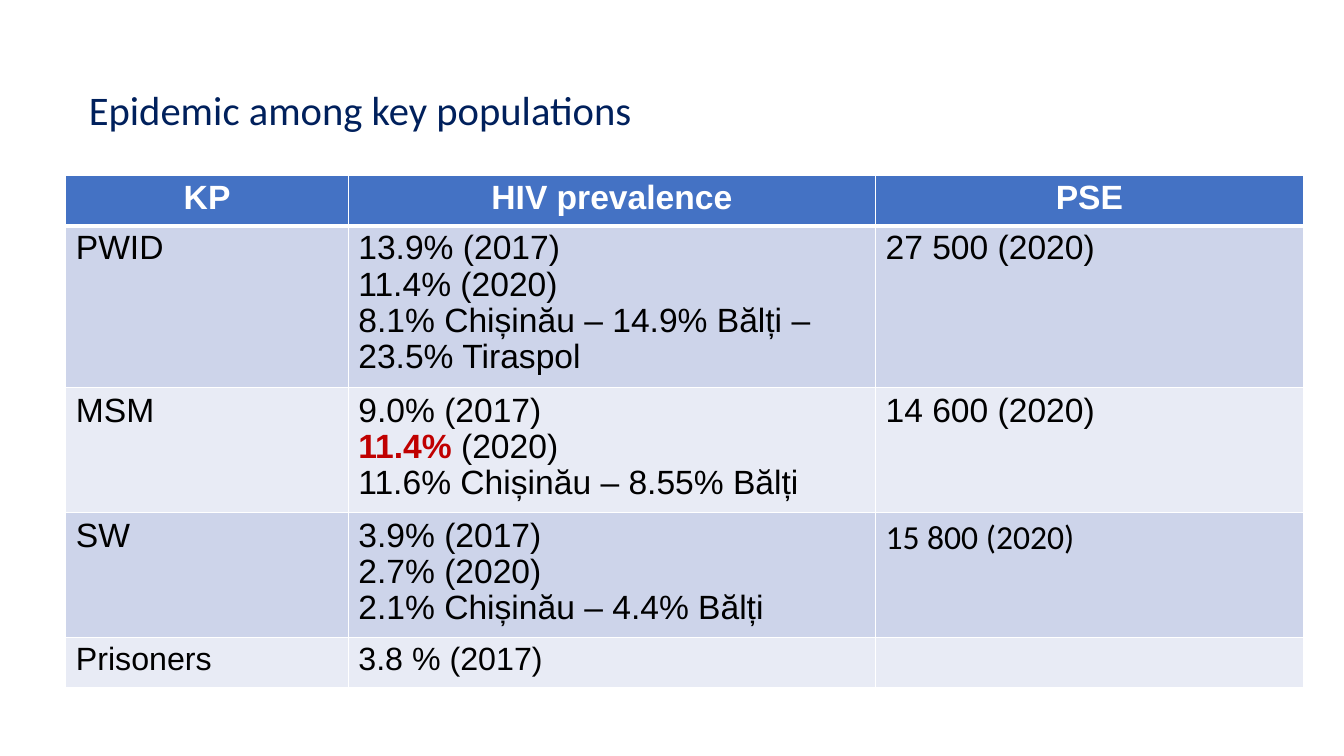
from dataclasses import dataclass

from lxml.etree import SubElement
from pptx import Presentation
from pptx.dml.color import RGBColor
from pptx.enum.text import MSO_ANCHOR, MSO_AUTO_SIZE, PP_ALIGN
from pptx.oxml.ns import qn
from pptx.util import Pt

NAVY = RGBColor(0x00, 0x20, 0x5C)
BLUE = RGBColor(0x44, 0x72, 0xC4)
BAND_DARK = RGBColor(0xCD, 0xD4, 0xEA)
BAND_LIGHT = RGBColor(0xE8, 0xEB, 0xF5)
WHITE = RGBColor(0xFF, 0xFF, 0xFF)
BLACK = RGBColor(0x00, 0x00, 0x00)
RED = RGBColor(0xC0, 0x00, 0x00)

COLUMN_WIDTHS = (201.8, 376.6, 305.5)
ROW_HEIGHTS = (35.8, 115.8, 89.3, 89.3, 35.8)
HEADINGS = ("KP", "HIV prevalence", "PSE")


@dataclass(frozen=True)
class Population:
    name: str
    prevalence: tuple[str, ...]
    size_estimate: str = ""
    highlight: str = ""
    estimate_font: str = "Arial"
    font_size: float = 24


POPULATIONS = (
    Population("PWID", ("13.9% (2017)", "11.4% (2020)",
                        "8.1% Chișinău – 14.9% Bălți – 23.5% Tiraspol"), "27 500 (2020)"),
    Population("MSM", ("9.0% (2017)", "11.4% (2020)", "11.6% Chișinău – 8.55% Bălți"),
               "14 600 (2020)", highlight="11.4% "),
    Population("SW", ("3.9% (2017)", "2.7% (2020)", "2.1% Chișinău – 4.4% Bălți"),
               "15 800 (2020)", estimate_font="Calibri"),
    Population("Prisoners", ("3.8 % (2017)",), font_size=23),
)


def add_text(paragraph, text: str, *, size: float = 24, font: str = "Arial",
             color: RGBColor = BLACK, bold: bool = False) -> None:
    run = paragraph.add_run()
    run.text = text
    run.font.size = Pt(size)
    run.font.name = font
    run.font.color.rgb = color
    run.font.bold = bold


def write_lines(cell, lines: tuple[str, ...], *, highlight: str = "",
                alignment: PP_ALIGN = PP_ALIGN.LEFT, **text_format) -> None:
    """Write one paragraph per line, with a highlighted start where it matches."""
    frame = cell.text_frame
    for index, line in enumerate(lines):
        paragraph = frame.add_paragraph() if index else frame.paragraphs[0]
        paragraph.alignment = alignment
        paragraph.line_spacing = 0.97
        if highlight and line.startswith(highlight):
            add_text(paragraph, highlight, color=RED, bold=True)
            line = line.removeprefix(highlight)
        add_text(paragraph, line, **text_format)


def style_cell(cell, fill: RGBColor, top: float, bottom: float) -> None:
    """Set white borders, whose top and bottom widths are in points, and the fill."""
    properties = cell._tc.get_or_add_tcPr()
    for side, width in (("L", 1), ("R", 1), ("T", top), ("B", bottom)):
        border = SubElement(properties, qn(f"a:ln{side}"), w=str(Pt(width)))
        solid = SubElement(border, qn("a:solidFill"))
        SubElement(solid, qn("a:srgbClr"), val=str(WHITE))
    cell.fill.solid()
    cell.fill.fore_color.rgb = fill


def add_title(slide) -> None:
    title = slide.shapes.title
    title.left, title.top, title.width, title.height = Pt(56.2), Pt(28), Pt(828), Pt(104.4)
    frame = title.text_frame
    frame.auto_size = MSO_AUTO_SIZE.NONE
    frame.vertical_anchor = MSO_ANCHOR.MIDDLE
    paragraph = frame.paragraphs[0]
    paragraph.alignment = PP_ALIGN.LEFT
    paragraph.line_spacing = 0.9
    add_text(paragraph, "Epidemic among key populations", size=29, font="Calibri", color=NAVY)


def add_population_table(slide) -> None:
    table = slide.shapes.add_table(
        len(ROW_HEIGHTS), len(COLUMN_WIDTHS), Pt(47), Pt(125.5),
        Pt(sum(COLUMN_WIDTHS)), Pt(sum(ROW_HEIGHTS))).table
    for column, width in zip(table.columns, COLUMN_WIDTHS):
        column.width = Pt(width)
    for row_index, (row, height) in enumerate(zip(table.rows, ROW_HEIGHTS)):
        row.height = Pt(height)
        fill = BLUE if row_index == 0 else BAND_DARK if row_index % 2 else BAND_LIGHT
        for cell in row.cells:
            style_cell(cell, fill, top=3 if row_index == 1 else 1,
                       bottom=3 if row_index == 0 else 1)

    for column_index, heading in enumerate(HEADINGS):
        write_lines(table.cell(0, column_index), (heading,), alignment=PP_ALIGN.CENTER,
                    color=WHITE, bold=True)
    for row_index, population in enumerate(POPULATIONS, start=1):
        name, prevalence, estimate = (table.cell(row_index, index) for index in range(3))
        size = population.font_size
        write_lines(name, (population.name,), size=size)
        write_lines(prevalence, population.prevalence, highlight=population.highlight, size=size)
        if population.size_estimate:
            write_lines(estimate, (population.size_estimate,), size=size,
                        font=population.estimate_font)


def main() -> None:
    presentation = Presentation()
    presentation.slide_width, presentation.slide_height = Pt(960), Pt(540)
    slide = presentation.slides.add_slide(presentation.slide_layouts.get_by_name("Title Only"))
    add_title(slide)
    add_population_table(slide)
    presentation.save("out.pptx")


if __name__ == "__main__":
    main()
